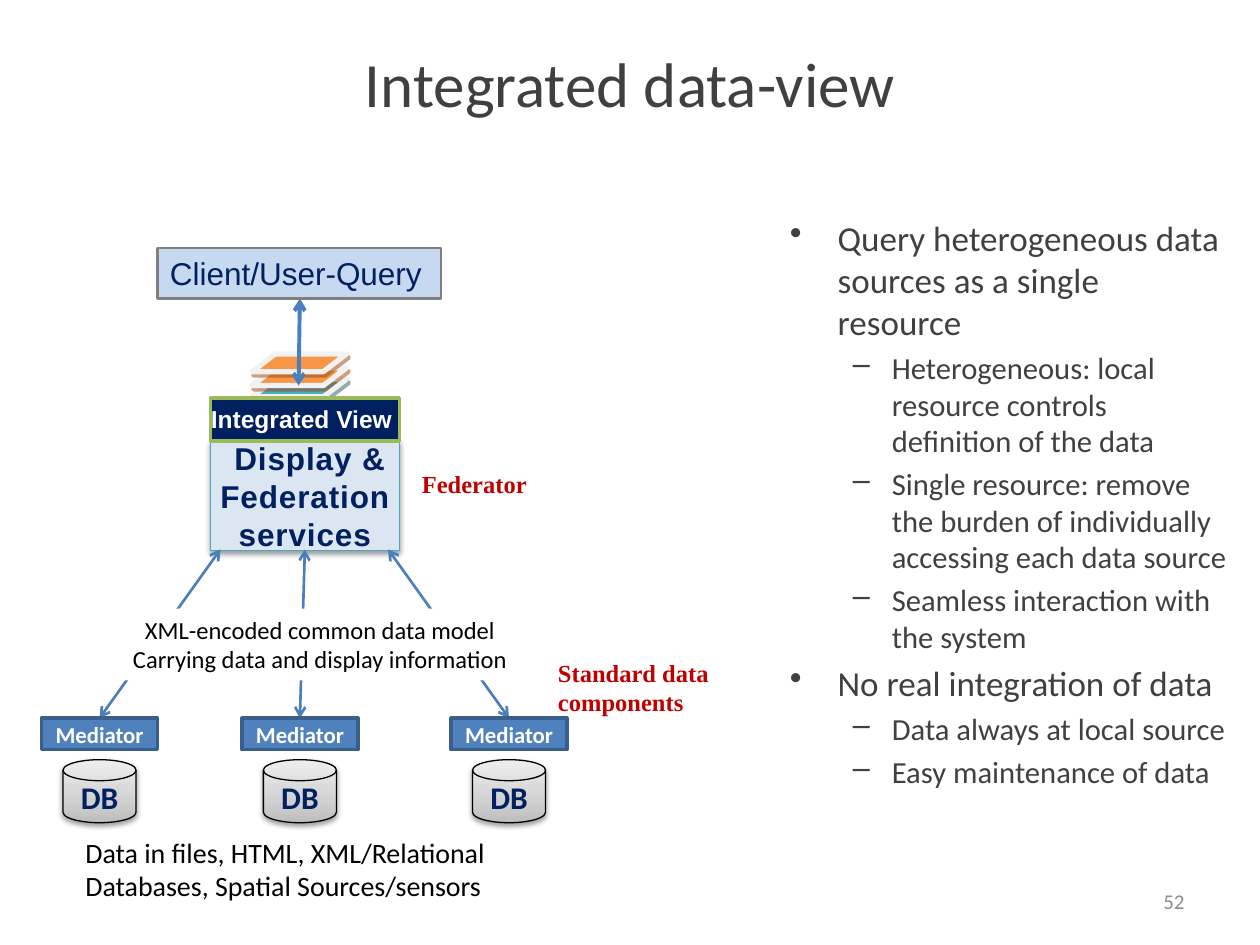
from dataclasses import dataclass
from typing import Optional

from lxml.etree import SubElement
from pptx import Presentation
from pptx.dml.color import RGBColor
from pptx.enum.shapes import MSO_CONNECTOR as Connector, MSO_SHAPE as Geometry
from pptx.enum.text import MSO_ANCHOR as Anchor, PP_ALIGN as Align
from pptx.oxml.ns import qn
from pptx.util import Inches, Pt

COLORS = {
    "ink": "404040", "navy": "002060", "black": "000000", "white": "FFFFFF",
    "red": "C00000", "number": "8C8C8C", "arrow": "4B7EBC",
    "mediator": "4F81BD", "mediator_edge": "3A5F8C",
    "client": "C6D9F1", "client_edge": "808080", "view_edge": "9BBB59",
    "service": "DCE6F2", "service_edge": "46AAC5",
    "teal": "4BACC6", "teal_shadow": "205867",
    "orange": "F79646", "orange_shadow": "974706", "sheet_edge": "F2F2F2",
}
DISK_STOPS = ((0, "BDBDBD"), (35, "D1D1D1"), (100, "EEEEEE"))


@dataclass(frozen=True)
class Style:
    size: float
    color: str
    font: str = "Calibri"
    bold: bool = False
    align: Align = Align.LEFT
    anchor: Anchor = Anchor.TOP
    wrap: bool = True
    inset: float = 0.1
    spacing: float = 0


@dataclass(frozen=True)
class Shadow:
    color: str
    alpha: int
    blur: float
    distance: float
    angle: int


@dataclass(frozen=True)
class Box:
    left: float
    top: float
    width: float
    height: float
    lines: tuple = ()
    style: Optional[Style] = None
    fill: Optional[str] = None
    edge: Optional[str] = None
    edge_width: float = 0
    geometry: Geometry = Geometry.RECTANGLE
    shadow: Optional[Shadow] = None
    adjust: Optional[float] = None


@dataclass(frozen=True)
class Arrow:
    start: tuple
    end: tuple
    width: float = 1.5


@dataclass(frozen=True)
class Bullet:
    text: str
    level: int = 1


SOFT = Shadow("black", 38, 3.1, 1.6, 90)
CENTER = dict(align=Align.CENTER, anchor=Anchor.MIDDLE)
TITLE = Style(36, "ink", **CENTER)
CLIENT = Style(18, "navy", "Arial")
SERVICE = Style(18, "navy", "Arial", True, wrap=False, spacing=0.5, **CENTER)
VIEW = Style(14, "white", "Arial", True, Align.CENTER, inset=0)
MEDIATOR = Style(13, "white", bold=True, wrap=False, **CENTER)
DATABASE = Style(18, "navy", bold=True, **CENTER)
MODEL = Style(14, "black", align=Align.CENTER)
SOURCES = Style(16, "black")
LABEL = Style(14, "red", "Times New Roman", True)
NUMBER = Style(12, "number", align=Align.RIGHT, anchor=Anchor.MIDDLE)
BODY_SIZES = {1: 20, 2: 17.5}
BODY_MARKS = {1: ("•", 0.38, 0.38), 2: ("–", 0.81, 0.31)}

BULLETS = (
    Bullet("Query heterogeneous data sources as a single resource"),
    Bullet("Heterogeneous: local resource controls definition of the data", 2),
    Bullet("Single resource: remove the burden of individually accessing each data source", 2),
    Bullet("Seamless interaction with the system", 2),
    Bullet("No real integration of data"),
    Bullet("Data always at local source", 2),
    Bullet("Easy maintenance of data", 2),
)


def rgb(name: str) -> RGBColor:
    """Look up a named colour."""
    return RGBColor.from_string(COLORS[name])


def add_shadow(shape, shadow: Shadow) -> None:
    """Give a shape an outer shadow."""
    effects = shape._element.spPr.find(qn("a:effectLst"))
    outer = SubElement(effects, qn("a:outerShdw"), blurRad=str(Pt(shadow.blur)),
                       dist=str(Pt(shadow.distance)), dir=str(shadow.angle * 60000),
                       rotWithShape="0")
    color = SubElement(outer, qn("a:srgbClr"), val=COLORS[shadow.color])
    SubElement(color, qn("a:alpha"), val=str(shadow.alpha * 1000))


def fill_disk(shape) -> None:
    """Fill a database disk with its three-stop gradient."""
    shape.fill.gradient()
    shape.fill.gradient_angle = 90
    stops = shape._element.spPr.find(qn("a:gradFill")).find(qn("a:gsLst"))
    stops.clear()
    for position, value in DISK_STOPS:
        stop = SubElement(stops, qn("a:gs"), pos=str(position * 1000))
        SubElement(stop, qn("a:srgbClr"), val=value)


def write(shape, lines: tuple, style: Style) -> None:
    """Write styled lines into a shape."""
    frame = shape.text_frame
    frame.word_wrap = style.wrap
    frame.vertical_anchor = style.anchor
    frame.margin_left = frame.margin_right = Inches(style.inset)
    frame.text = "\n".join(lines)
    for paragraph in frame.paragraphs:
        paragraph.alignment = style.align
        font = paragraph.font
        font.size, font.name, font.bold = Pt(style.size), style.font, style.bold
        font.color.rgb = rgb(style.color)
        if style.spacing:
            for run in paragraph.runs:
                run.font._element.set("spc", str(int(style.spacing * 100)))


def add_box(slide, box: Box) -> None:
    """Draw a text box or a filled shape."""
    place = [Inches(value) for value in (box.left, box.top, box.width, box.height)]
    if box.fill is None:
        shape = slide.shapes.add_textbox(*place)
    else:
        shape = slide.shapes.add_shape(box.geometry, *place)
        shape.shadow.inherit = False
        if box.fill == "disk":
            fill_disk(shape)
        else:
            shape.fill.solid()
            shape.fill.fore_color.rgb = rgb(box.fill)
        if box.edge:
            shape.line.color.rgb = rgb(box.edge)
            shape.line.width = Pt(box.edge_width)
        else:
            shape.line.fill.background()
        if box.adjust is not None:
            shape.adjustments[0] = box.adjust
        if box.shadow:
            add_shadow(shape, box.shadow)
    if box.style:
        write(shape, box.lines, box.style)


def add_arrow(slide, arrow: Arrow) -> None:
    """Draw a double-headed arrow."""
    points = [Inches(value) for value in (*arrow.start, *arrow.end)]
    connector = slide.shapes.add_connector(Connector.STRAIGHT, *points)
    connector.line.color.rgb = rgb("arrow")
    connector.line.width = Pt(arrow.width)
    line = connector.line._get_or_add_ln()
    for end in ("a:headEnd", "a:tailEnd"):
        SubElement(line, qn(end), type="arrow")
    SubElement(connector._element.spPr, qn("a:effectLst"))


def add_bullets(slide, bullets: tuple) -> None:
    """Write the two-level bullet list."""
    shape = slide.shapes.add_textbox(Inches(6.17), Inches(1.67), Inches(3.67), Inches(5.33))
    write(shape, tuple(bullet.text for bullet in bullets), Style(20, "ink"))
    for paragraph, bullet in zip(shape.text_frame.paragraphs, bullets):
        size = BODY_SIZES[bullet.level]
        mark, margin, hang = BODY_MARKS[bullet.level]
        paragraph.level = bullet.level - 1
        paragraph.font.size = Pt(size)
        paragraph.space_before = Pt(size * 0.2)
        properties = paragraph._p.get_or_add_pPr()
        properties.set("marL", str(Inches(margin)))
        properties.set("indent", str(-Inches(hang)))
        character = SubElement(properties, qn("a:buChar"), char=mark)
        properties.find(qn("a:defRPr")).addprevious(character)


def sheet(top: float, color: str) -> Box:
    """Describe one sheet of the stacked view."""
    return Box(2, top, 0.75, 0.14, fill=color, edge="sheet_edge", edge_width=3,
               geometry=Geometry.PARALLELOGRAM, adjust=1.31,
               shadow=Shadow(f"{color}_shadow", 50, 0, 2.2, 63))


def main() -> None:
    """Build the slide."""
    presentation = Presentation()
    presentation.slide_width, presentation.slide_height = Inches(10), Inches(7.5)
    slide = presentation.slides.add_slide(presentation.slide_layouts[6])
    columns = ((0.79, 1.75), (2.38, 2.42), (4.04, 3.08))
    items = [
        sheet(3.01, "teal"),
        Box(0.5, 0.3, 9, 0.7, ("Integrated data-view",), TITLE),
        Box(1.67, 3.5, 1.5, 0.87, (" Display &", "Federation", "services"), SERVICE,
            "service", "service_edge", 0.75, shadow=SOFT),
        Box(1.67, 3.16, 1.5, 0.34, ("Integrated View ",), VIEW, "navy", "view_edge", 2),
        Box(1.25, 1.97, 2.25, 0.4, ("Client/User-Query",), CLIENT, "client", "client_edge", 1.5),
        Box(0.58, 6.58, 3.5, 0.64,
            ("Data in files, HTML, XML/Relational Databases, Spatial Sources/sensors",), SOURCES),
        Box(7.17, 6.95, 2.33, 0.4, ("52",), NUMBER),
    ]
    for center, service_x in columns:
        items += [
            Arrow((center, 5.7), (service_x, 4.36)),
            Box(center - 0.46, 5.7, 0.92, 0.25, ("Mediator",), MEDIATOR,
                "mediator", "mediator_edge", 2),
            Box(center - 0.29, 6.03, 0.58, 0.5, ("DB",), DATABASE, "disk", "black", 0.75,
                Geometry.FLOWCHART_MAGNETIC_DISK, SOFT),
        ]
    items += [
        sheet(2.92, "orange"),
        sheet(2.81, "orange"),
        Arrow((2.38, 2.37), (2.37, 3.06), 2.25),
        Box(0.83, 4.83, 3.42, 0.57, ("XML-encoded common data model",
            "Carrying data and display information"), MODEL, "white"),
        Box(3.25, 3.67, 1.17, 0.34, ("Federator",), LABEL),
        Box(4.33, 5.17, 1.42, 0.57, ("Standard data components",), LABEL),
    ]
    for item in items:
        if isinstance(item, Arrow):
            add_arrow(slide, item)
        else:
            add_box(slide, item)
    add_bullets(slide, BULLETS)
    presentation.save("out.pptx")


if __name__ == "__main__":
    main()
